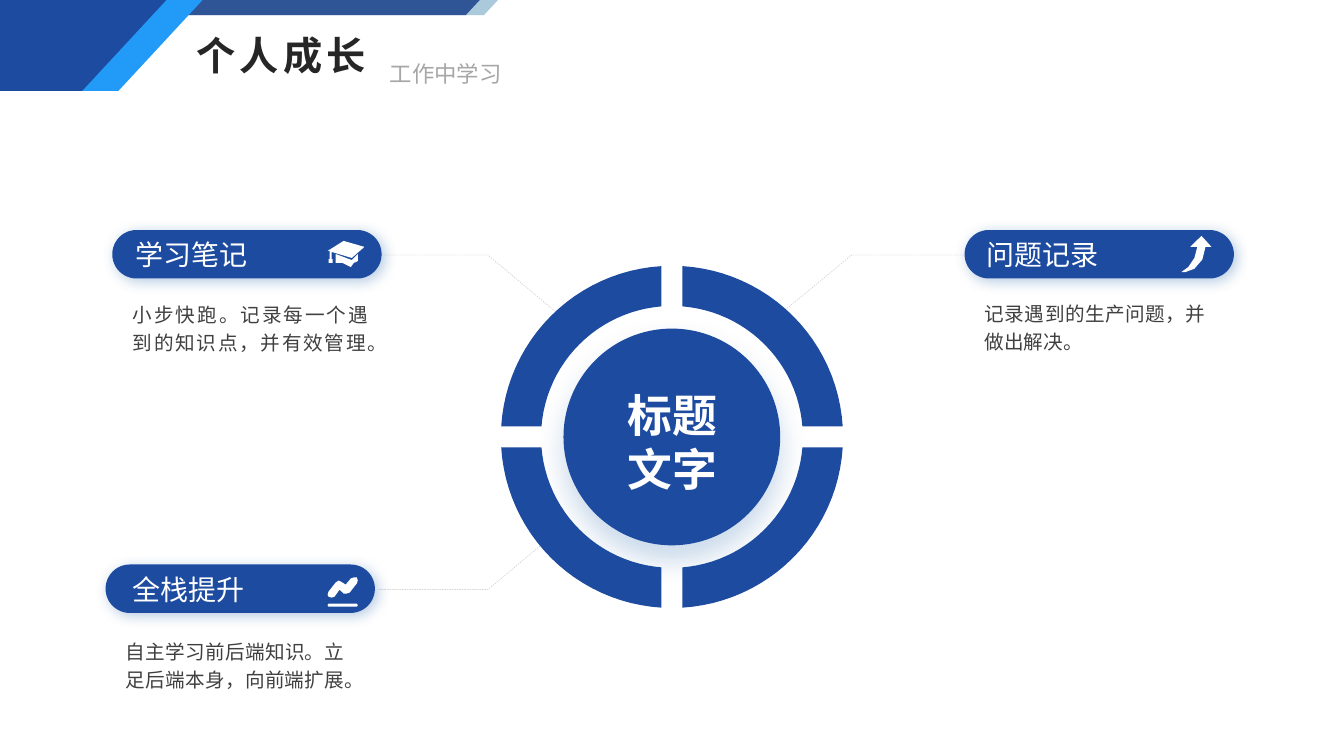
"""Build the personal growth slide: a four-part ring with labelled topics."""
from dataclasses import dataclass
from math import asin, cos, pi, sin

from lxml.etree import SubElement
from pptx import Presentation
from pptx.dml.color import RGBColor
from pptx.enum.dml import MSO_LINE
from pptx.enum.shapes import MSO_SHAPE
from pptx.enum.text import MSO_ANCHOR, MSO_AUTO_SIZE, PP_ALIGN
from pptx.oxml.ns import qn
from pptx.util import Pt

FONT = "Noto Sans CJK SC"
COLOURS = {
    "blue": "1D4BA0", "sky": "229BF8", "steel": "2F5597", "teal": "1A6D9F",
    "shadow": "0B54A2", "title": "262626", "subtitle": "A6A6A6",
    "body": "404040", "leader": "BFBFBF", "white": "FFFFFF",
}
CENTRE = (480, 312.1)
OUTER, INNER, HALF_GAP = 122.2, 93.5, 7.5
ARC_STEPS = 24

Point = tuple[float, float]
Contour = list[Point]


@dataclass
class Shadow:
    alpha: int
    blur: float
    distance: float
    angle: int


@dataclass
class TextStyle:
    size: float
    colour: str
    bold: bool = False
    spacing: float = 0
    align: PP_ALIGN = PP_ALIGN.LEFT
    line_spacing: float = 1.0


@dataclass
class Topic:
    label: str
    detail: str
    pill: Point
    label_left: float
    label_width: float
    detail_at: Point
    detail_width: float
    icon_at: Point
    icon: list[Contour]
    leader: Contour


CAP = [
    [(5.8, 9.4), (17.3, 13.7), (21.6, 9.4), (21.6, 14.4), (18.7, 15.8),
     (16.6, 18.7), (10.8, 15.8), (5.8, 15.8)],
    [(11.5, 0), (26.3, 4.3), (17.3, 12.2), (2.9, 7.9), (2.9, 13), (3.6, 13),
     (3.6, 15.8), (0.7, 15.8), (0.7, 13), (1.4, 13), (1.4, 7.2), (0, 7.2)],
]
TREND = [
    [(0.7, 14.4), (0, 13), (0.7, 10.8), (5.8, 4.3), (7.9, 2.9), (9.4, 3.6),
     (13, 5.8), (16.6, 1.4), (18.7, 0.7), (20.9, 0.7), (21.6, 2.9), (20.9, 5),
     (15.8, 11.5), (13.7, 12.2), (11.5, 12.2), (8.6, 9.4), (5, 14.4), (2.9, 15.1)],
    [(1.4, 21.6), (0.7, 21.6), (0, 20.5), (0.7, 19.4), (1.4, 19.4),
     (20.2, 19.4), (20.9, 19.4), (21.6, 20.5), (20.9, 21.6), (20.2, 21.6)],
]
ARROW = [
    [(17.3, 7.9), (21.6, 7.9), (14.4, 0), (6.5, 7.9), (11.5, 7.9), (9.4, 15.8),
     (5, 22.3), (0, 25.9), (2.9, 25.9), (9.4, 23.5), (15.1, 16.9)],
]
TOPICS = [
    Topic("学习笔记", "小步快跑。记录每一个遇到的知识点，并有效管理。", (80.2, 164.3),
          96.5, 143.3, (95, 213.1), 167.8, (234, 172.1), CAP,
          [(396.7, 222.5), (348.5, 182.2), (270, 182.2)]),
    Topic("全栈提升", "自主学习前后端知识。立足后端本身，向前端扩展。", (75.4, 403.2),
          94.3, 147.6, (90, 453.6), 156.2, (234, 411.8), TREND,
          [(396.7, 380.9), (348.5, 421.2), (270, 421.2)]),
    Topic("问题记录", "记录遇到的生产问题，并做出解决。", (689, 164.3),
          704.9, 136.1, (703.4, 212.4), 157.7, (843.8, 168.5), ARROW,
          [(559.4, 222.5), (608.4, 182.2), (690.5, 182.2)]),
]


def colour(name: str) -> RGBColor:
    """Return the named colour."""
    return RGBColor.from_string(COLOURS[name])


def paint(shape, fill: str, alpha: int = 100, shadow: Shadow | None = None) -> None:
    """Fill a shape without outline, with optional transparency and shadow."""
    shape.fill.solid()
    shape.fill.fore_color.rgb = colour(fill)
    shape.line.fill.background()
    shape.shadow.inherit = False
    if alpha < 100:
        tint = next(shape.element.spPr.iter(qn("a:srgbClr")))
        SubElement(tint, qn("a:alpha"), val=str(alpha * 1000))
    if shadow:
        effects = shape.element.spPr.find(qn("a:effectLst"))
        outer = SubElement(
            effects, qn("a:outerShdw"), blurRad=str(Pt(shadow.blur)),
            dist=str(Pt(shadow.distance)), dir=str(shadow.angle * 60000),
            algn="ctr", rotWithShape="0")
        tint = SubElement(outer, qn("a:srgbClr"), val=COLOURS["shadow"])
        SubElement(tint, qn("a:alpha"), val=str(shadow.alpha * 1000))


def add_preset(page, kind: MSO_SHAPE, left: float, top: float, width: float, height: float):
    """Add a preset shape measured in points."""
    return page.shapes.add_shape(kind, Pt(left), Pt(top), Pt(width), Pt(height))


def add_outline(page, contours: list[Contour], origin: Point = (0, 0), close: bool = True):
    """Add a freeform made of one or more contours."""
    placed = [[(Pt(x + origin[0]), Pt(y + origin[1])) for x, y in contour]
              for contour in contours]
    builder = page.shapes.build_freeform(*placed[0][0])
    for index, contour in enumerate(placed):
        if index:
            builder.move_to(*contour[0])
        builder.add_line_segments(contour[1:], close=close)
    return builder.convert_to_shape()


def arc(radius: float, across: int, down: int) -> Contour:
    """Return points along one quarter of a circle, trimmed by the gap."""
    trim = asin(HALF_GAP / radius)
    angles = [trim + (pi / 2 - 2 * trim) * step / ARC_STEPS for step in range(ARC_STEPS + 1)]
    return [(CENTRE[0] + across * radius * cos(angle), CENTRE[1] + down * radius * sin(angle))
            for angle in angles]


def write(box, lines: list[str], style: TextStyle, inset: Point = (0, 0), wrap: bool = True) -> None:
    """Write one paragraph per line into a shape."""
    frame = box.text_frame
    frame.word_wrap = wrap
    frame.auto_size = MSO_AUTO_SIZE.NONE
    frame.vertical_anchor = MSO_ANCHOR.TOP
    frame.margin_left = frame.margin_right = Pt(inset[0])
    frame.margin_top = frame.margin_bottom = Pt(inset[1])
    for index, line in enumerate(lines):
        para = frame.add_paragraph() if index else frame.paragraphs[0]
        para.alignment = style.align
        para.line_spacing = style.line_spacing
        para.space_before = Pt(0)
        span = para.add_run()
        span.text = line
        span.font.size = Pt(style.size)
        span.font.bold = style.bold
        span.font.name = FONT
        span.font.color.rgb = colour(style.colour)
        properties = span.font._element
        SubElement(properties, qn("a:ea"), typeface=FONT)
        if style.spacing:
            properties.set("spc", str(int(style.spacing * 100)))


def add_text(page, left: float, top: float, width: float, height: float):
    """Add an empty text box measured in points."""
    return page.shapes.add_textbox(Pt(left), Pt(top), Pt(width), Pt(height))


def draw_header(page) -> None:
    """Draw the slanted bands, the title and the subtitle."""
    for left, fill, alpha in ((85, "teal", 37), (72, "steel", 100)):
        band = add_preset(page, MSO_SHAPE.PARALLELOGRAM, left, 0, 270.7, 10.8)
        band.adjustments[0] = 0.929
        paint(band, fill, alpha)
    for top_right, bottom_right, fill in ((144.7, 84.5, "sky"), (118.8, 58.6, "blue")):
        corner = [(0, 0), (top_right, 0), (bottom_right, 65), (0, 65)]
        paint(add_outline(page, [corner]), fill)
    title = page.shapes.title
    title.left, title.top, title.width, title.height = Pt(133.2), Pt(18.7), Pt(138.2), Pt(41)
    write(title, ["个人成长"], TextStyle(28, "title", True, 3), (7.2, 3.6), False)
    subtitle = add_text(page, 271.4, 39.6, 95, 26.6)
    write(subtitle, ["工作中学习"], TextStyle(16, "subtitle"), (7.2, 3.6), False)


def draw_ring(page) -> None:
    """Draw the four ring parts and the central disc."""
    for across in (-1, 1):
        for down in (-1, 1):
            part = arc(OUTER, across, down) + arc(INNER, across, down)[::-1]
            paint(add_outline(page, [part]), "blue")
    disc = add_preset(page, MSO_SHAPE.OVAL, 402.5, 234.7, 154.8, 154.8)
    paint(disc, "blue", shadow=Shadow(21, 20, 11, 90))
    write(add_text(page, 409.7, 277.2, 141.8, 77.8), ["标题", "文字"],
          TextStyle(32, "white", True, align=PP_ALIGN.CENTER))


def draw_leader(page, topic: Topic) -> None:
    """Draw the dashed line from the ring to a topic."""
    leader = add_outline(page, [topic.leader], close=False)
    leader.fill.background()
    leader.line.color.rgb = colour("leader")
    leader.line.width = Pt(0.25)
    leader.line.dash_style = MSO_LINE.DASH
    leader.shadow.inherit = False


def draw_topic(page, topic: Topic) -> None:
    """Draw a topic's pill, label, detail and icon."""
    left, top = topic.pill
    write(add_text(page, *topic.detail_at, topic.detail_width, 38.9), [topic.detail],
          TextStyle(14, "body", align=PP_ALIGN.JUSTIFY, line_spacing=1.2))
    pill = add_preset(page, MSO_SHAPE.ROUNDED_RECTANGLE, left, top, 192.4, 34.6)
    pill.adjustments[0] = 0.5
    paint(pill, "blue", shadow=Shadow(30, 10, 3, 45))
    write(add_text(page, topic.label_left, top + 5.6, topic.label_width, 24.5),
          [topic.label], TextStyle(20, "white"))
    paint(add_outline(page, topic.icon, topic.icon_at), "white")


def main() -> None:
    """Build and save the deck."""
    deck = Presentation()
    deck.slide_width, deck.slide_height = Pt(960), Pt(540)
    page = deck.slides.add_slide(deck.slide_layouts[5])
    draw_header(page)
    for topic in TOPICS:
        draw_leader(page, topic)
    draw_ring(page)
    for topic in TOPICS:
        draw_topic(page, topic)
    deck.save("out.pptx")


if __name__ == "__main__":
    main()
